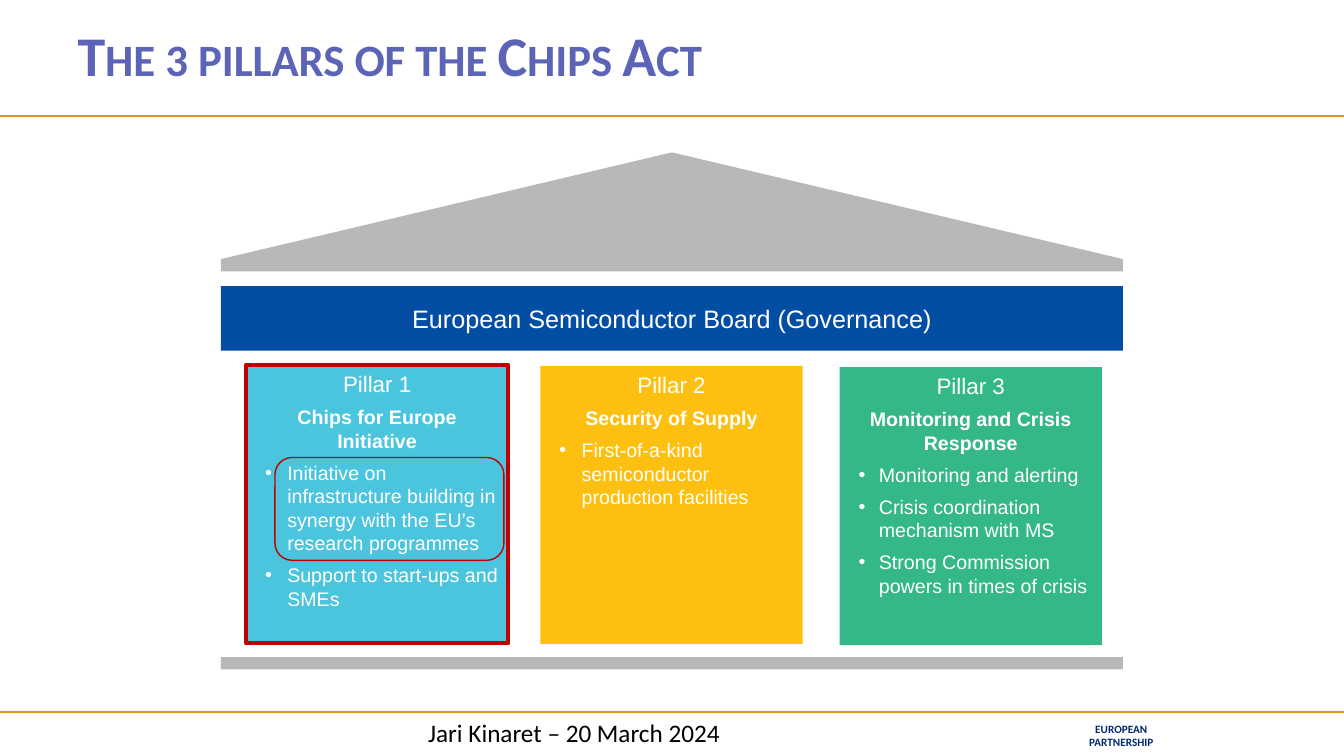
from dataclasses import dataclass

from lxml import etree
from pptx import Presentation
from pptx import util as u
from pptx.dml.color import RGBColor
from pptx.enum import shapes, text
from pptx.oxml.ns import qn

TITLE = "The 3 pillars of the Chips Act"
BOARD = "European Semiconductor Board (Governance)"
AUTHOR = "Jari Kinaret – 20 March 2024"
PARTNERSHIP = "EUROPEAN\vPARTNERSHIP"

# label, heading, bullets, (left, top) in cm, bullet indent in cm, hanging in cm, fill, outline
PILLARS = [
    ("Pillar 3", "Monitoring and Crisis Response",
     ["Monitoring and alerting",
      "Crisis coordination mechanism with MS",
      "Strong Commission powers in times of crisis"],
     (21.16, 9.25), 0.74, 0.51, "34B888", None),
    ("Pillar 2", "Security of Supply",
     ["First-of-a-kind semiconductor production facilities"],
     (13.62, 9.22), 0.79, 0.56, "FEC010", None),
    ("Pillar 1", "Chips for Europe Initiative",
     ["Initiative on infrastructure building in synergy with the EU’s research programmes",
      "Support to start-ups and SMEs"],
     (6.2, 9.2), 0.79, 0.56, "4BC5DE", "C00000"),
]


@dataclass(frozen=True)
class Theme:
    heading_font: str = "Calibri"
    body_font: str = "Arial"
    title: str = "5C64B7"
    rule: str = "E09322"
    stone: str = "B8B8B8"
    board: str = "034EA2"
    highlight: str = "C00000"
    partnership: str = "002673"
    white: str = "FFFFFF"
    black: str = "000000"
    title_size: int = 40
    large_size: int = 18
    label_size: int = 16
    body_size: int = 14
    small_size: int = 8


THEME = Theme()
SLIDE_W, SLIDE_H = 33.87, 19.05
TEMPLE_LEFT, TEMPLE_W = 5.57, 22.73
ROOF_TOP, ROOF_H, SLAB_H = 3.84, 2.69, 0.31
PILLAR_W, PILLAR_H = 6.61, 7.01
HEADER_RULE, FOOTER_RULE = 2.92, 17.94


def style(paragraph, font_name, size, color, bold=False, align=text.PP_ALIGN.LEFT):
    paragraph.alignment = align
    font = paragraph.font
    font.name, font.size, font.bold = font_name, u.Pt(size), bold
    font.color.rgb = RGBColor.from_string(color)


def add_block(slide, kind, left, top, width, height, fill=None, outline=None, weight=1):
    block = slide.shapes.add_shape(kind, *map(u.Cm, (left, top, width, height)))
    block.shadow.inherit = False
    if fill:
        block.fill.solid()
        block.fill.fore_color.rgb = RGBColor.from_string(fill)
    else:
        block.fill.background()
    if outline:
        block.line.color.rgb = RGBColor.from_string(outline)
        block.line.width = u.Pt(weight)
    else:
        block.line.fill.background()
    return block


def add_rule(slide, top):
    rule = slide.shapes.add_connector(
        shapes.MSO_CONNECTOR.STRAIGHT, 0, u.Cm(top), u.Cm(SLIDE_W), u.Cm(top))
    rule.line.color.rgb = RGBColor.from_string(THEME.rule)
    rule.line.width = u.Pt(1.5)
    etree.SubElement(rule.line._get_or_add_ln().getparent(), qn("a:effectLst"))


def add_label(slide, words, left, top, width, height):
    label = slide.shapes.add_textbox(*map(u.Cm, (left, top, width, height)))
    label.text_frame.word_wrap = True
    label.text_frame.text = words
    return label.text_frame


def add_bullet(paragraph, indent, hanging):
    properties = paragraph._p.get_or_add_pPr()
    properties.set("marL", str(u.Cm(indent)))
    properties.set("indent", str(-u.Cm(hanging)))
    etree.SubElement(properties, qn("a:buFont"), typeface=THEME.body_font)
    etree.SubElement(properties, qn("a:buChar"), char="•")


def add_pillar(slide, label, heading, bullets, corner, indent, hanging, fill, outline):
    pillar = add_block(slide, shapes.MSO_SHAPE.RECTANGLE, *corner,
                       PILLAR_W, PILLAR_H, fill, outline, 3)
    frame = pillar.text_frame
    frame.vertical_anchor = text.MSO_ANCHOR.TOP
    frame.text = "\n".join([label, heading, *bullets])
    for row, paragraph in enumerate(frame.paragraphs):
        paragraph.space_after = u.Pt(6)
        is_bullet = row > 1
        if is_bullet:
            add_bullet(paragraph, indent, hanging)
        style(paragraph, THEME.body_font,
              THEME.body_size if row else THEME.label_size, THEME.white, bold=row == 1,
              align=text.PP_ALIGN.LEFT if is_bullet else text.PP_ALIGN.CENTER)


def add_title(slide):
    title = slide.shapes.title
    title.left, title.top, title.width, title.height = map(
        u.Cm, (1.7, 0, 30.48, HEADER_RULE))
    frame = title.text_frame
    frame.text = TITLE
    frame.auto_size = text.MSO_AUTO_SIZE.NONE
    frame.vertical_anchor = text.MSO_ANCHOR.MIDDLE
    paragraph = frame.paragraphs[0]
    paragraph.line_spacing = 0.9
    style(paragraph, THEME.heading_font, THEME.title_size, THEME.title, bold=True)
    paragraph.runs[0].font._element.set("cap", "small")


def add_footer(slide):
    partnership = add_label(slide, PARTNERSHIP, 27.13, 18.19, 2.26, 0.66)
    partnership.margin_top = partnership.margin_bottom = 0
    style(partnership.paragraphs[0], THEME.heading_font, THEME.small_size,
          THEME.partnership, bold=True, align=text.PP_ALIGN.CENTER)
    author = add_label(slide, AUTHOR, 10.54, FOOTER_RULE, 11.99, 0.74)
    style(author.paragraphs[0], THEME.heading_font, THEME.large_size, THEME.black)


def add_temple(slide):
    rectangle = shapes.MSO_SHAPE.RECTANGLE
    for pillar in PILLARS:
        add_pillar(slide, *pillar)
    for slab_top in (ROOF_TOP + ROOF_H, 16.56):
        add_block(slide, rectangle, TEMPLE_LEFT, slab_top, TEMPLE_W, SLAB_H, THEME.stone)
    add_block(slide, shapes.MSO_SHAPE.ISOSCELES_TRIANGLE,
              TEMPLE_LEFT, ROOF_TOP, TEMPLE_W, ROOF_H, THEME.stone)
    board = add_block(slide, rectangle, TEMPLE_LEFT, 7.21, TEMPLE_W, 1.63, THEME.board)
    board.text_frame.text = BOARD
    board.text_frame.vertical_anchor = text.MSO_ANCHOR.MIDDLE
    style(board.text_frame.paragraphs[0], THEME.body_font, THEME.large_size,
          THEME.white, align=text.PP_ALIGN.CENTER)
    add_block(slide, shapes.MSO_SHAPE.ROUNDED_RECTANGLE,
              6.93, 11.53, 5.77, 2.59, outline=THEME.highlight)


def main():
    deck = Presentation()
    deck.slide_width, deck.slide_height = u.Cm(SLIDE_W), u.Cm(SLIDE_H)
    slide = deck.slides.add_slide(deck.slide_layouts[5])
    for rule_top in (FOOTER_RULE, HEADER_RULE):
        add_rule(slide, rule_top)
    add_title(slide)
    add_temple(slide)
    add_footer(slide)
    deck.save("out.pptx")


if __name__ == "__main__":
    main()
